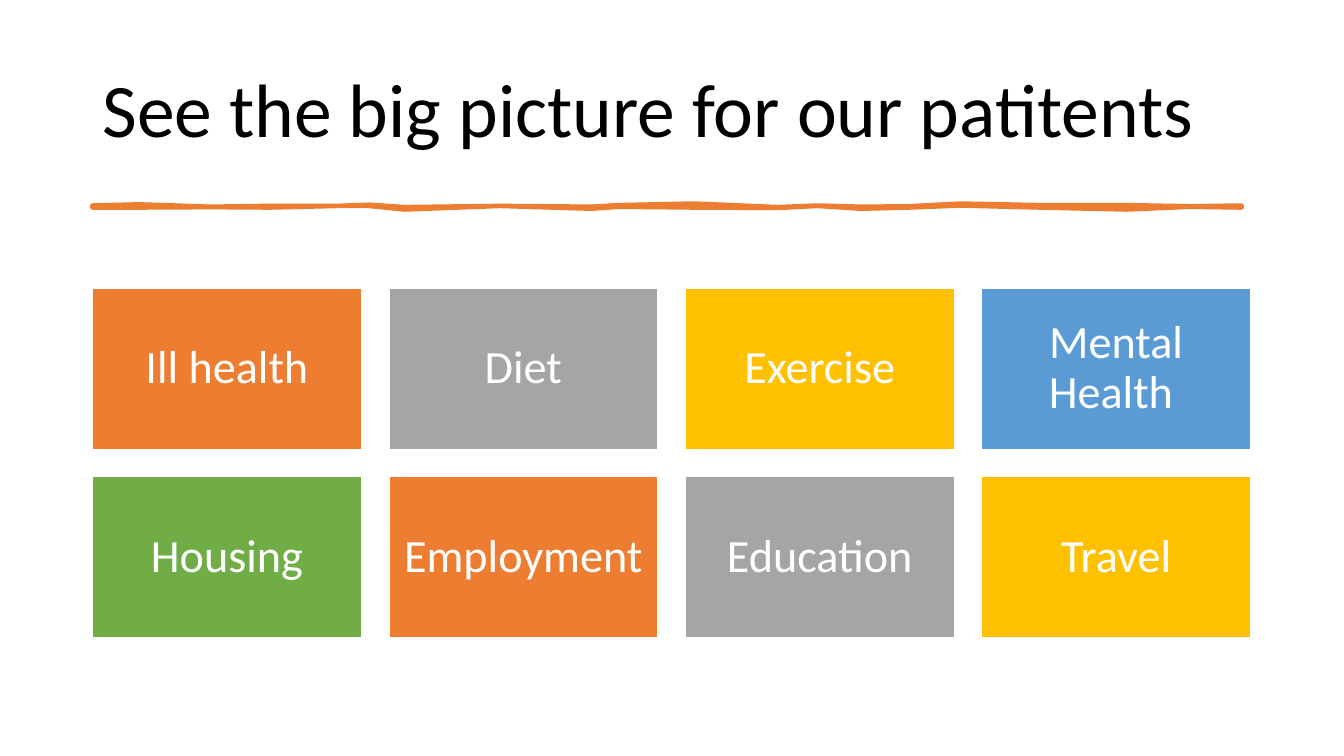
import pptx
import pptx.util
import pptx.dml.color
import pptx.enum.shapes
import pptx.enum.text

Cm, Pt = pptx.util.Cm, pptx.util.Pt

# Content
TITLE = "See the big picture for our patitents"
TOPICS = [
    [("Ill health", "orange"), ("Diet", "gray"), ("Exercise", "gold"), ("Mental Health ", "blue")],
    [("Housing", "green"), ("Employment", "orange"), ("Education", "gray"), ("Travel", "gold")],
]
COLORS = {
    "orange": "ED7D31", "gray": "A5A5A5", "gold": "FFC000", "blue": "5B9BD5",
    "green": "70AD47", "white": "FFFFFF", "black": "000000",
}
# Hand-drawn rule: x, upper edge, lower edge in cm
BRUSH = [
    (2.33, 5.18, 5.23), (3.5, 5.15, 5.23), (5.3, 5.21, 5.22), (6.8, 5.19, 5.23),
    (8.5, 5.19, 5.19), (9.3, 5.16, 5.19), (10.2, 5.22, 5.28), (12.6, 5.19, 5.19),
    (14.9, 5.21, 5.26), (15.6, 5.17, 5.21), (17.5, 5.13, 5.23), (19.6, 5.22, 5.24),
    (20.6, 5.18, 5.19), (21.7, 5.21, 5.26), (22.9, 5.2, 5.23), (24.2, 5.13, 5.18),
    (26.2, 5.17, 5.23), (28.4, 5.17, 5.28), (30.0, 5.2, 5.21), (31.29, 5.18, 5.23),
]

# Layout in cm
LEFT, GRID_TOP = 2.33, 7.26
BOX_W, BOX_H = 6.78, 4.07
STEP_X, STEP_Y = 7.47, 4.75
PAD = 0.36


def rgb(name):
    return pptx.dml.color.RGBColor.from_string(COLORS[name])


def paint(sp, fill, line, width):
    sp.shadow.inherit = False
    sp.fill.solid()
    sp.fill.fore_color.rgb = rgb(fill)
    sp.line.color.rgb = rgb(line)
    sp.line.width = Pt(width)


def write(sp, text, size, color, align, pad_x, pad_y):
    tf = sp.text_frame
    frame = {
        "word_wrap": True, "vertical_anchor": pptx.enum.text.MSO_ANCHOR.MIDDLE,
        "margin_left": Cm(pad_x), "margin_right": Cm(pad_x),
        "margin_top": Cm(pad_y), "margin_bottom": Cm(pad_y),
    }
    for key, value in frame.items():
        setattr(tf, key, value)
    p = tf.paragraphs[0]
    p.alignment, p.line_spacing = align, 0.9
    r = p.add_run()
    r.text = text
    for key, value in {"name": "Calibri", "size": Pt(size)}.items():
        setattr(r.font, key, value)
    r.font.color.rgb = rgb(color)


def main():
    prs = pptx.Presentation()
    prs.slide_width, prs.slide_height = Cm(33.87), Cm(19.05)
    s = prs.slides.add_slide(prs.slide_layouts[6])
    align = pptx.enum.text.PP_ALIGN

    # Title
    title = s.shapes.add_textbox(Cm(LEFT), Cm(1.02), Cm(29.21), Cm(3.68))
    write(title, TITLE, 54, "black", align.LEFT, 0.25, 0.13)

    # Rule under the title
    upper = [(Cm(x), Cm(top)) for x, top, _ in BRUSH]
    lower = [(Cm(x), Cm(bottom)) for x, _, bottom in reversed(BRUSH)]
    outline = s.shapes.build_freeform(*upper[0])
    outline.add_line_segments(upper[1:] + lower, close=True)
    paint(outline.convert_to_shape(), "orange", "orange", 3.25)

    # Topic boxes
    for row, topics in enumerate(TOPICS):
        for col, (text, color) in enumerate(topics):
            sp = s.shapes.add_shape(
                pptx.enum.shapes.MSO_SHAPE.RECTANGLE,
                Cm(LEFT + col * STEP_X), Cm(GRID_TOP + row * STEP_Y), Cm(BOX_W), Cm(BOX_H))
            paint(sp, color, "white", 1)
            write(sp, text, 33, "white", align.CENTER, PAD, PAD)

    prs.save("out.pptx")


if __name__ == "__main__":
    main()
